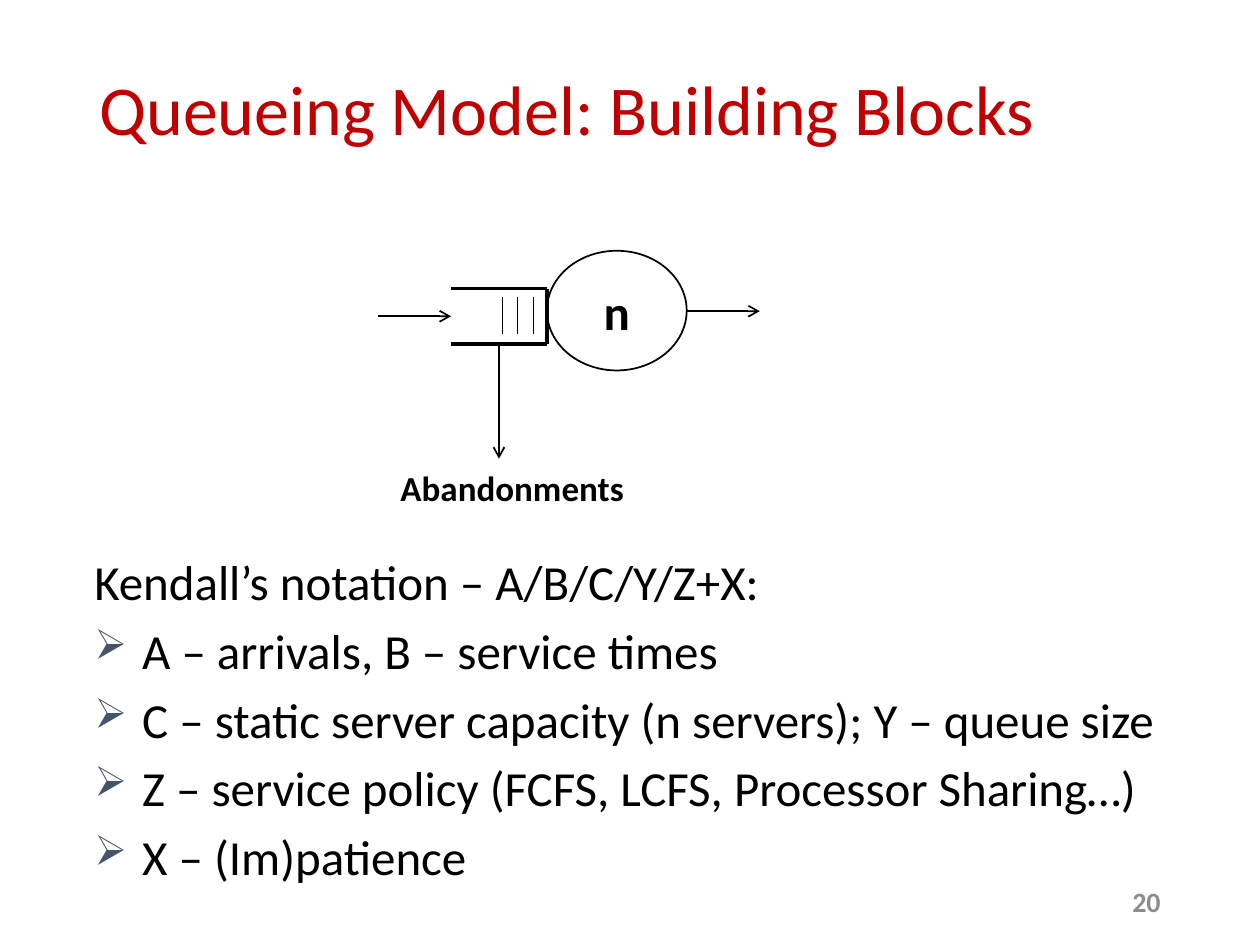
import pptx
import pptx.util
import pptx.dml.color
import pptx.enum.shapes
import pptx.enum.text
import pptx.oxml
import pptx.oxml.ns

Inches = pptx.util.Inches
Pt = pptx.util.Pt
Align = pptx.enum.text.PP_ALIGN
Anchor = pptx.enum.text.MSO_ANCHOR
BLACK = "000000"


def shade(text):
    return pptx.dml.color.RGBColor.from_string(text)


def put(item, vals):
    for name, val in vals.items():
        setattr(item, name, val)


def add_xml(parent, body):
    tag, rest = body.split(" ", 1)
    space = pptx.oxml.ns.nsdecls("a")
    parent.append(pptx.oxml.parse_xml(f"<a:{tag} {space} {rest}/>"))


def write(par, text, size, tint=BLACK, bold=False, **vals):
    put(par, vals)
    run = par.add_run()
    run.text = text
    put(run.font, {"name": "Calibri", "size": Pt(size), "bold": bold})
    run.font.color.rgb = shade(tint)


def add_box(slide, left, top, width, height, anchor=Anchor.TOP):
    box = slide.shapes.add_textbox(*map(Inches, (left, top, width, height)))
    put(box.text_frame, {"word_wrap": True, "vertical_anchor": anchor})
    return box.text_frame


def add_line(shapes, x1, y1, x2, y2, width=1, arrow=False):
    kind = pptx.enum.shapes.MSO_CONNECTOR.STRAIGHT
    line = shapes.add_connector(kind, *map(Inches, (x1, y1, x2, y2)))
    line.line.color.rgb = shade(BLACK)
    line.line.width = Pt(width)
    if arrow:
        add_xml(line.line._get_or_add_ln(), 'tailEnd type="arrow"')
    add_xml(line._element.spPr, "effectLst ")


def add_bullet(par):
    props = par._p.get_or_add_pPr()
    props.set("marL", str(Inches(0.38)))
    props.set("indent", str(Inches(-0.38)))
    add_xml(props, "buClr ")
    add_xml(props[-1], 'srgbClr val="44546A"')
    add_xml(props, 'buSzPct val="85000"')
    add_xml(props, 'buChar char="➢"')


def add_server(shapes):
    oval = shapes.add_shape(pptx.enum.shapes.MSO_SHAPE.OVAL,
                            *map(Inches, (4.34, 1.99, 1.11, 0.95)))
    oval.shadow.inherit = False
    oval.fill.background()
    oval.line.color.rgb = shade(BLACK)
    oval.line.width = Pt(1)
    oval.text_frame.vertical_anchor = Anchor.MIDDLE
    write(oval.text_frame.paragraphs[0], "n", 28, bold=True,
          alignment=Align.CENTER)


def add_queue(slide):
    add_line(slide.shapes, 3.96, 2.72, 3.96, 3.64, arrow=True)
    shapes = slide.shapes.add_group_shape().shapes
    left, right, top, base = 3.58, 4.34, 2.29, 2.73
    for ends in ((left, top, right, top), (right, top, right, base),
                 (right, base, left, base)):
        add_line(shapes, *ends, width=2.25)
    for step in range(3):
        spot = 4.23 - 0.12 * step
        add_line(shapes, spot, 2.36, spot, 2.65, width=0.5)
    add_server(shapes)
    for start, level in ((5.45, 2.47), (3, 2.51)):
        add_line(shapes, start, level, start + 0.58, level, arrow=True)


def add_notes(slide):
    frame = add_box(slide, 0.65, 4.33, 8.92, 3.4)
    lines = ("Kendall’s notation – A/B/C/Y/Z+X:",
             "A – arrivals, B – service times",
             "C – static server capacity (n servers); Y – queue size",
             "Z – service policy (FCFS, LCFS, Processor Sharing…)",
             "X – (Im)patience")
    for rank, text in enumerate(lines):
        par = frame.add_paragraph() if rank else frame.paragraphs[0]
        write(par, text, 28, space_before=Pt(5.6))
        if rank:
            add_bullet(par)


def main():
    deck = pptx.Presentation()
    put(deck, {"slide_width": Inches(10), "slide_height": Inches(7.5)})
    slide = deck.slides.add_slide(deck.slide_layouts[6])
    title = add_box(slide, 0.69, 0.17, 8.62, 1.45, Anchor.MIDDLE)
    write(title.paragraphs[0], "Queueing Model: Building Blocks", 40,
          "C00000", line_spacing=0.9)
    page = add_box(slide, 7.06, 6.95, 2.25, 0.4, Anchor.MIDDLE)
    write(page.paragraphs[0], "20", 16, "8C8C8C", True, alignment=Align.RIGHT)
    add_notes(slide)
    label = add_box(slide, 3.08, 3.65, 2.05, 0.44)
    write(label.paragraphs[0], "Abandonments", 20, bold=True)
    add_queue(slide)
    deck.save("out.pptx")


if __name__ == "__main__":
    main()
